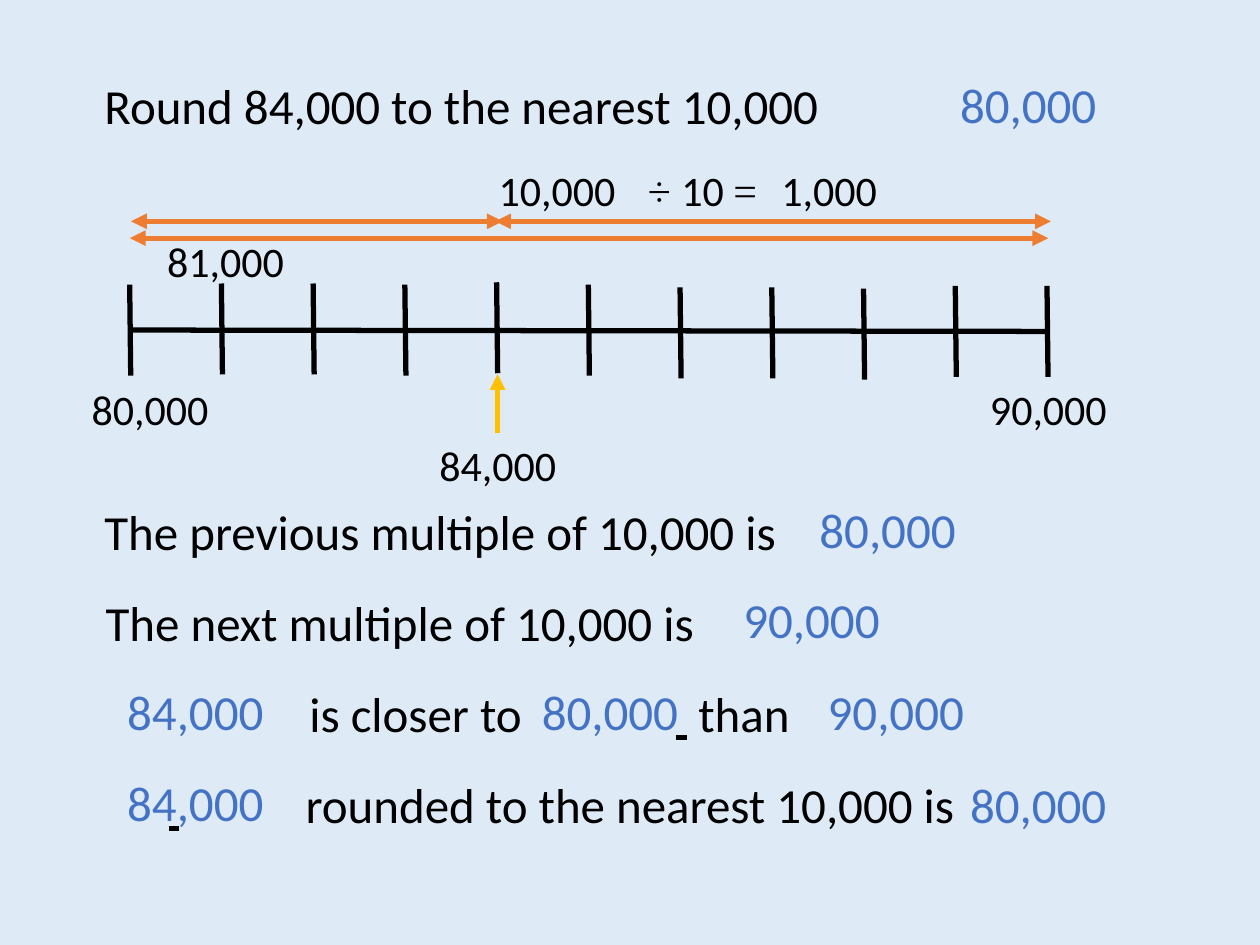
from pptx import Presentation
from pptx.dml.color import RGBColor
from pptx.enum.shapes import MSO_CONNECTOR as Connector
from pptx.enum.text import MSO_AUTO_SIZE as AutoSize, PP_ALIGN as Align
from pptx.oxml.ns import qn
from pptx.util import Pt
from lxml.etree import SubElement

BACKGROUND = RGBColor(0xDE, 0xEB, 0xF7)
BLACK = RGBColor(0, 0, 0)
BLUE = RGBColor(0x44, 0x72, 0xC4)
ORANGE = RGBColor(0xED, 0x7D, 0x31)
GOLD = RGBColor(0xFF, 0xC0, 0x00)
BODY_FONT, SIGN_FONT = "Calibri", "Times New Roman"
SENTENCE_SIZE, LABEL_SIZE = 28, 24

AXIS_LEFT, TICK_STEP, TICK_HEIGHT = 74.4, 52.42, 52
TICK_TOPS = [162.7, 162, 162, 162.7, 161.3, 162.7, 164.2, 164.2, 164.9, 163.4, 163.4]


def add_text(page, left, top, width, size, spans, color=BLACK, align=Align.CENTER, tabs=()):
    """Spans are (text, font, underlined) tuples; tabs are stops in points."""
    box = page.shapes.add_textbox(Pt(left), Pt(top), Pt(width), Pt(41 if size == SENTENCE_SIZE else 36))
    frame = box.text_frame
    frame.word_wrap = True
    frame.auto_size = AutoSize.SHAPE_TO_FIT_TEXT
    para = frame.paragraphs[0]
    para.alignment = align
    if tabs:
        tab_list = SubElement(para._p.get_or_add_pPr(), qn("a:tabLst"))
        for stop in tabs:
            SubElement(tab_list, qn("a:tab"), pos=str(Pt(stop)), algn="l")
    for text, font, underlined in spans:
        span = para.add_run()
        span.text = text
        span.font.name = font
        span.font.size = Pt(size)
        span.font.color.rgb = color
        if underlined:
            span.font.underline = True


def add_label(page, text, left, top, width):
    add_text(page, left, top, width, LABEL_SIZE, [(text, BODY_FONT, False)])


def add_answer(page, text, left, top, width):
    add_text(page, left, top, width, SENTENCE_SIZE, [(text, BODY_FONT, False)], BLUE)


def add_sentence(page, left, top, width, parts, tabs=()):
    """Blank parts are the underlined gaps that the answers fill."""
    spans = [(part, BODY_FONT, not part.strip()) for part in parts]
    add_text(page, left, top, width, SENTENCE_SIZE, spans, align=Align.LEFT, tabs=tabs)


def add_line(page, x1, y1, x2, y2, color=BLACK, arrowheads=()):
    line = page.shapes.add_connector(Connector.STRAIGHT, Pt(x1), Pt(y1), Pt(x2), Pt(y2))
    line.line.color.rgb = color
    line.line.width = Pt(3)
    for end in arrowheads:
        SubElement(line.line._get_or_add_ln(), qn(end), type="triangle")
    SubElement(line._element.spPr, qn("a:effectLst"))


def add_number_line(page):
    add_line(page, 74.9, 188.6, 599, 189.4)
    for index, top in enumerate(TICK_TOPS):
        x = AXIS_LEFT + index * TICK_STEP
        add_line(page, x - 0.3, top, x + 0.3, top + TICK_HEIGHT)
    add_label(page, "80,000", -10.8, 215.5, 193)
    add_label(page, "90,000", 502.6, 215.5, 193)

    # Number to round
    add_line(page, 284.4, 247.7, 284.4, 213.8, GOLD, ["a:tailEnd"])
    add_label(page, "84,000", 188, 247.7, 193)

    # Spans above the line
    for left, right, y in [(74.2, 599, 136.1), (74.9, 287.3, 126.5), (283, 600.5, 126.5)]:
        add_line(page, left, y, right, y, ORANGE, ["a:headEnd", "a:tailEnd"])

    # Size of one interval
    add_label(page, "10,000", 221.8, 90.7, 193)
    add_text(page, 357.1, 90.7, 88.6, LABEL_SIZE,
             [("÷ ", SIGN_FONT, False), ("10 ", BODY_FONT, False), ("=", SIGN_FONT, False)])
    add_label(page, "1,000", 423.4, 90.7, 100.8)
    add_label(page, "81,000", 78.5, 131, 100.8)


def add_sentences(page):
    add_sentence(page, 52.6, 282.8, 592, ["The previous multiple of 10,000 is "])
    add_sentence(page, 53.3, 335, 547, ["The next multiple of 10,000 is "])
    add_sentence(page, 55.4, 387.2, 585, ["\t", " is closer to ", "\t ", " than "], [108, 324])
    add_sentence(page, 53.3, 439.2, 598, ["\t \t", " rounded to the nearest 10,000 is "], [36, 108])

    # Answers that fill the gaps
    for text, left, top, width in [
        ("80,000", 437, 282.2, 140.4),
        ("90,000", 367.2, 333.4, 193),
        ("84,000", 54.7, 386, 113.8),
        ("80,000", 291.6, 386, 113.8),
        ("90,000", 446.4, 386, 131),
        ("84,000", 54.7, 437.8, 113.8),
        ("80,000", 545, 439.2, 96.5),
    ]:
        add_answer(page, text, left, top, width)


def main():
    deck = Presentation()
    deck.slide_width, deck.slide_height = Pt(720), Pt(540)
    page = deck.slides.add_slide(deck.slide_layouts[6])
    page.background.fill.solid()
    page.background.fill.fore_color.rgb = BACKGROUND

    # Question and its answer
    add_sentence(page, 52.6, 39.6, 491, ["Round 84,000 to the nearest 10,000"])
    add_answer(page, "80,000", 491, 39, 193)

    add_number_line(page)
    add_sentences(page)
    deck.save("out.pptx")


if __name__ == "__main__":
    main()
